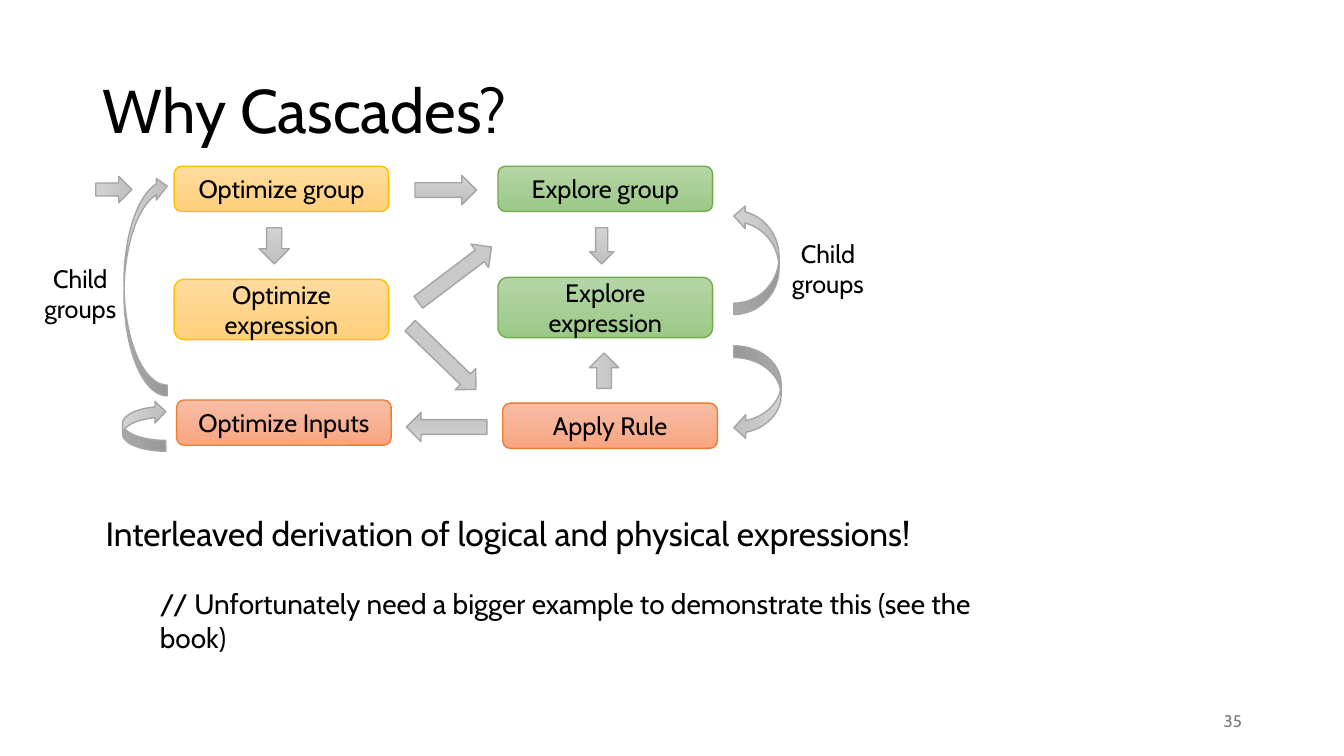
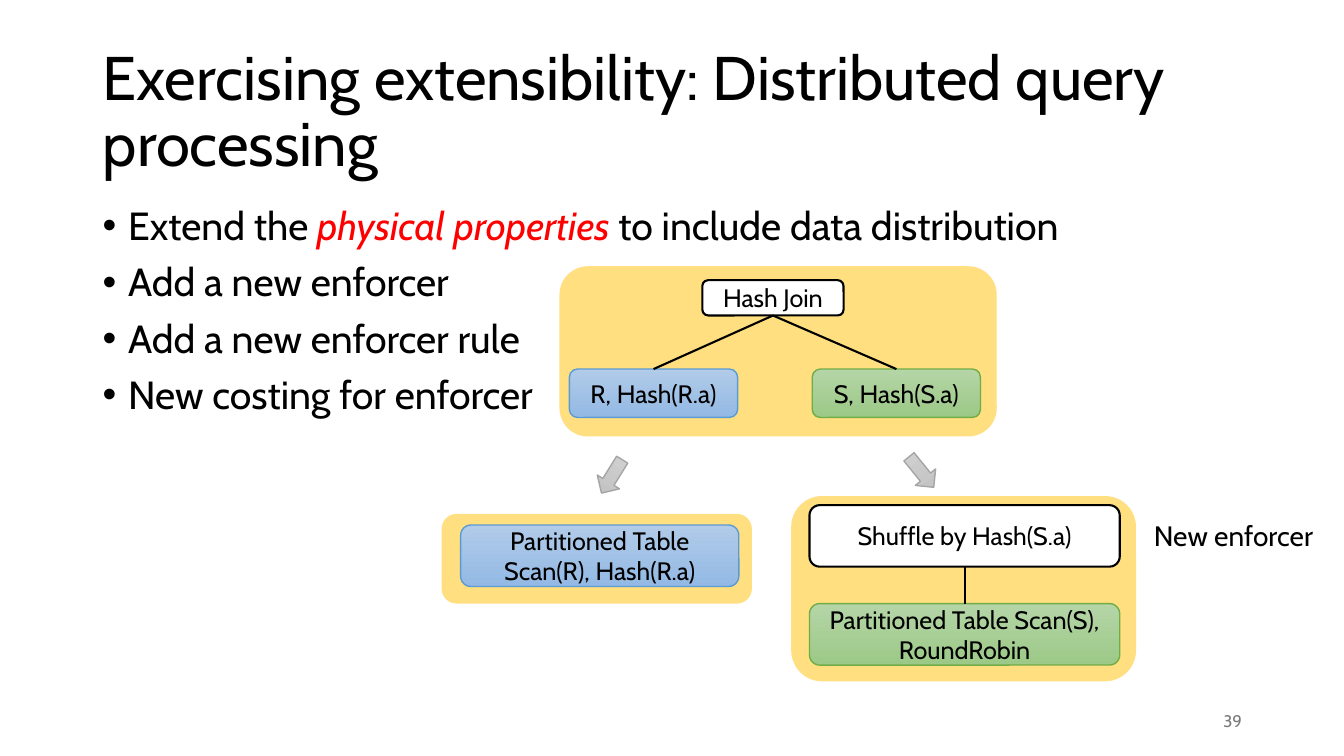
from dataclasses import dataclass

from lxml import etree
from pptx import Presentation
from pptx.dml.color import RGBColor
from pptx.enum import shapes, text
from pptx.oxml import ns
from pptx.util import Cm, Pt


@dataclass(frozen=True)
class Theme:
    font: str = "Cabin"
    ink: str = "000000"
    muted: str = "797979"
    accent: str = "FF0000"
    panel: str = "FFC000"
    title: int = 44
    bullet: int = 28
    statement: int = 24
    remark: int = 20
    label: int = 18
    number: int = 12


theme = Theme()
# Each look: top fill, bottom fill, line colour, line width
looks = {
    "gold": ("FFDB9E", "FFD07C", "FFC000", 1),
    "green": ("B5D5A7", "9CC987", "70AD47", 1),
    "coral": ("F7BDA5", "F8A582", "ED7D31", 1),
    "blue": ("B1CBE9", "93B9E4", "5B9BD5", 1),
    "gray": ("D2D2D2", "C0C0C0", "A5A5A5", 1),
    "white": ("FFFFFF", "FFFFFF", theme.ink, 1.5),
}
preset = shapes.MSO_SHAPE
left, center, right = text.PP_ALIGN.LEFT, text.PP_ALIGN.CENTER, text.PP_ALIGN.RIGHT
top, middle = text.MSO_ANCHOR.TOP, text.MSO_ANCHOR.MIDDLE


def write(holder, words, size, color=theme.ink, align=left, anchor=top, spacing=1.0):
    frame = holder.text_frame
    frame.text = words
    frame.word_wrap = True
    frame.vertical_anchor = anchor
    for paragraph in frame.paragraphs:
        paragraph.alignment = align
        paragraph.line_spacing = spacing
        for run in paragraph.runs:
            run.font.name = theme.font
            run.font.size = Pt(size)
            run.font.color.rgb = RGBColor.from_string(color)
    return frame


def draw(slide, kind, box, look, words="", turn=0):
    shape = slide.shapes.add_shape(kind, *map(Cm, box))
    shape.shadow.inherit = False
    shape.rotation = turn
    upper, lower, edge, width = looks[look]
    if upper == lower:
        shape.fill.solid()
        shape.fill.fore_color.rgb = RGBColor.from_string(upper)
    else:
        shape.fill.gradient()
        shape.fill.gradient_angle = 270
        for stop, color in zip(shape.fill.gradient_stops, (upper, lower)):
            stop.color.rgb = RGBColor.from_string(color)
    shape.line.color.rgb = RGBColor.from_string(edge)
    shape.line.width = Pt(width)
    if words:
        write(shape, words, theme.label, align=center, anchor=middle)
    return shape


deck = Presentation()
deck.slide_width, deck.slide_height = Cm(33.87), Cm(19.05)

# Title and page number on both slides
pages = []
for heading, number in (
    ("Why Cascades?", "35"),
    ("Exercising extensibility: Distributed query processing", "39"),
):
    page = deck.slides.add_slide(deck.slide_layouts[6])
    title = page.shapes.add_textbox(Cm(2.34), Cm(1.02), Cm(29.21), Cm(3.68))
    write(title, heading, theme.title, anchor=middle, spacing=0.9)
    footer = page.shapes.add_textbox(Cm(23.93), Cm(17.65), Cm(7.62), Cm(1.02))
    write(footer, number, theme.number, theme.muted, right, middle)
    pages.append(page)
cascades, distributed = pages

# Cascades: the six tasks
for words, x, y, height, look in (
    ("Optimize group", 4.39, 4.19, 1.14, "gold"),
    ("Optimize expression", 4.39, 7.04, 1.52, "gold"),
    ("Explore group", 12.55, 4.19, 1.14, "green"),
    ("Explore expression", 12.55, 6.99, 1.52, "green"),
    ("Apply Rule", 12.67, 10.16, 1.14, "coral"),
    ("Optimize Inputs", 4.45, 10.08, 1.14, "coral"),
):
    draw(cascades, preset.ROUNDED_RECTANGLE, (x, y, 5.41, height), look, words)

# Cascades: the flow between tasks
for kind, box, turn in (
    (preset.DOWN_ARROW, (2.54, 4.32, 0.66, 0.91), 270),
    (preset.RIGHT_ARROW, (10.46, 4.42, 1.55, 0.74), 0),
    (preset.DOWN_ARROW, (6.53, 5.74, 0.76, 0.91), 0),
    (preset.DOWN_ARROW, (14.86, 5.74, 0.61, 0.91), 0),
    (preset.RIGHT_ARROW, (10.31, 6.55, 2.31, 0.74), 322.9),
    (preset.RIGHT_ARROW, (10.01, 8.64, 2.31, 0.74), 44),
    (preset.RIGHT_ARROW, (14.78, 8.97, 0.89, 0.74), 270),
    (preset.RIGHT_ARROW, (10.24, 10.39, 2.03, 0.74), 180),
    (preset.CURVED_UP_ARROW, (17.68, 5.97, 2.77, 1.14), 270),
    (preset.CURVED_DOWN_ARROW, (17.91, 9.3, 2.36, 1.19), 90),
    (preset.CURVED_DOWN_ARROW, (0.89, 6.65, 5.56, 1.09), 270),
    (preset.CURVED_DOWN_ARROW, (3, 10.19, 1.27, 1.09), 270),
):
    draw(cascades, kind, box, "gray", turn=turn)

# Free text on both slides
for page, words, box, size, align in (
    (cascades, "Child\ngroups", (18.87, 5.87, 3.99, 1.8), theme.label, center),
    (cascades, "Child\ngroups", (0.03, 6.5, 3.99, 1.8), theme.label, center),
    (cascades, "Interleaved derivation of logical and physical expressions!",
     (2.41, 12.8, 21.67, 1.27), theme.statement, left),
    (cascades, "// Unfortunately need a bigger example to demonstrate this (see the book)",
     (3.78, 14.66, 22.4, 1.12), theme.remark, left),
    (distributed, "New enforcer", (28.83, 12.95, 5, 1.12), theme.remark, left),
):
    write(page.shapes.add_textbox(*map(Cm, box)), words, size, align=align)

# Distributed: bullets, with the key term emphasised
term = "physical properties"
bullets = distributed.shapes.add_textbox(Cm(2.34), Cm(5.08), Cm(29.21), Cm(12.09))
body = write(
    bullets,
    "Extend the \nAdd a new enforcer\nAdd a new enforcer rule\nNew costing for enforcer",
    theme.bullet,
    spacing=0.9,
)
for words in (term, " to include data distribution"):
    run = body.paragraphs[0].add_run()
    run.text = words
    run.font.name = theme.font
    run.font.size = Pt(theme.bullet)
    run.font.italic = words == term
    run.font.color.rgb = RGBColor.from_string(theme.accent if words == term else theme.ink)
for paragraph in body.paragraphs:
    paragraph.space_before = Pt(10)
    props = paragraph._p.get_or_add_pPr()
    props.set("marL", str(Cm(0.64)))
    props.set("indent", str(-Cm(0.64)))
    etree.SubElement(props, ns.qn("a:buFont")).set("typeface", "Arial")
    etree.SubElement(props, ns.qn("a:buChar")).set("char", "•")

# Distributed: translucent panels behind the plans
for box in (
    (14.1, 6.71, 11.02, 4.29),
    (11.13, 12.95, 7.82, 2.26),
    (19.94, 12.5, 8.69, 4.67),
):
    panel = distributed.shapes.add_shape(preset.ROUNDED_RECTANGLE, *map(Cm, box))
    panel.shadow.inherit = False
    panel.line.fill.background()
    panel.fill.solid()
    panel.fill.fore_color.rgb = RGBColor.from_string(theme.panel)
    tint = panel._element.spPr.find(".//" + ns.qn("a:srgbClr"))
    etree.SubElement(tint, ns.qn("a:alpha")).set("val", "50000")

# Distributed: plan operators
operators = {
    words: draw(distributed, preset.ROUNDED_RECTANGLE, box, look, words)
    for words, box, look in (
        ("Hash Join", (17.7, 7.06, 3.56, 0.89), "white"),
        ("R, Hash(R.a)", (14.35, 9.3, 4.24, 1.22), "blue"),
        ("S, Hash(S.a)", (20.47, 9.3, 4.24, 1.22), "green"),
        ("Partitioned Table Scan(R), Hash(R.a)", (11.61, 13.23, 7.01, 1.55), "blue"),
        ("Shuffle by Hash(S.a)", (20.4, 12.73, 7.82, 1.55), "white"),
        ("Partitioned Table Scan(S), RoundRobin", (20.4, 15.21, 7.82, 1.55), "green"),
    )
}

# Distributed: edges from each operator to its inputs
for parent, child in (
    ("Hash Join", "R, Hash(R.a)"),
    ("Hash Join", "S, Hash(S.a)"),
    ("Shuffle by Hash(S.a)", "Partitioned Table Scan(S), RoundRobin"),
):
    edge = distributed.shapes.add_connector(shapes.MSO_CONNECTOR.STRAIGHT, 0, 0, 0, 0)
    edge.begin_connect(operators[parent], 2)
    edge.end_connect(operators[child], 0)
    edge.line.color.rgb = RGBColor.from_string(theme.ink)
    edge.line.width = Pt(1.5)
    etree.SubElement(edge._element.spPr, ns.qn("a:effectLst"))

# Distributed: arrows to the chosen plans
for x, y, turn in ((15.09, 11.51, 31.8), (22.89, 11.4, 320.9)):
    draw(distributed, preset.DOWN_ARROW, (x, y, 0.66, 0.99), "gray", turn=turn)

deck.save("out.pptx")
